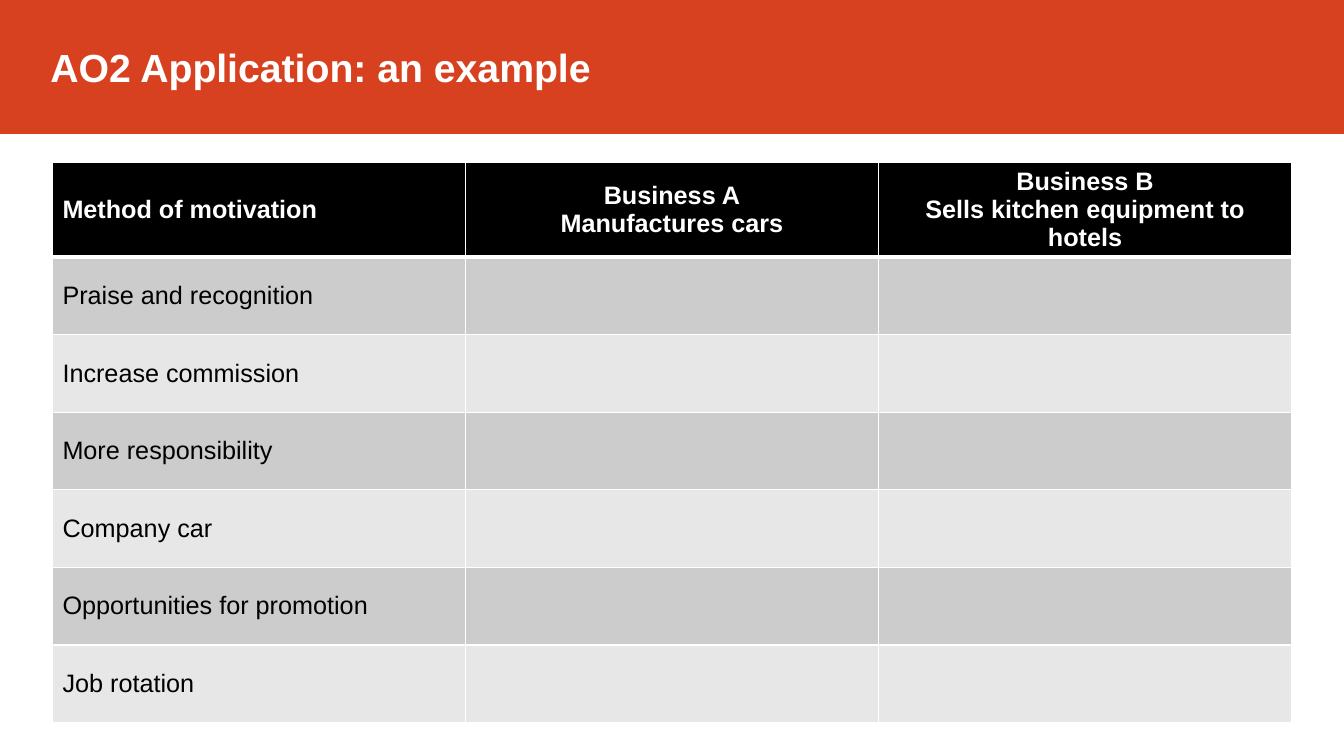
"""Build a slide with a title band and a table of motivation methods."""
from lxml import etree
from pptx import Presentation
from pptx.dml.color import RGBColor
from pptx.enum.shapes import MSO_SHAPE
from pptx.enum.text import MSO_ANCHOR, PP_ALIGN
from pptx.oxml.ns import qn
from pptx.util import Inches, Pt

RECT = MSO_SHAPE.RECTANGLE
MIDDLE = MSO_ANCHOR.MIDDLE
LEFT, CENTER = PP_ALIGN.LEFT, PP_ALIGN.CENTER

COLORS = {
    "band": "D74120",
    "head": "000000",
    "odd": "CCCCCC",
    "even": "E7E7E7",
    "light": "FFFFFF",
    "dark": "000000",
}
FORMATS = {
    "title": {"name": "Arial", "size": Pt(28), "bold": True},
    "head": {"name": "Arial", "size": Pt(18), "bold": True},
    "body": {"name": "Arial", "size": Pt(18), "bold": False},
}
HEADS = [
    ["Method of motivation"],
    ["Business A", "Manufactures cars"],
    ["Business B", "Sells kitchen equipment to hotels"],
]
METHODS = [
    "Praise and recognition",
    "Increase commission",
    "More responsibility",
    "Company car",
    "Opportunities for promotion",
    "Job rotation",
]


def color(key):
    """Return the named color."""
    return RGBColor.from_string(COLORS[key])


def paint(item, key):
    """Give an item a solid fill."""
    item.fill.solid()
    item.fill.fore_color.rgb = color(key)


def write(frame, lines, style, ink, align=LEFT):
    """Write one paragraph per line in the given style."""
    for i, line in enumerate(lines):
        para = frame.add_paragraph() if i else frame.paragraphs[0]
        para.alignment = align
        run = para.add_run()
        run.text = line
        for name, value in FORMATS[style].items():
            setattr(run.font, name, value)
        run.font.color.rgb = color(ink)


def add_band(slide, text):
    """Add the title band across the top."""
    band = slide.shapes.add_shape(RECT, 0, 0, Inches(13.33), Inches(1.32))
    band.shadow.inherit = False
    paint(band, "band")
    band.line.color.rgb = color("band")
    band.line.width = Pt(1)
    frame = band.text_frame
    frame.word_wrap = True
    frame.vertical_anchor = MIDDLE
    frame.margin_left = Inches(0.5)
    write(frame, [text], "title", "light")


def add_edges(cell, top, bottom):
    """Draw light borders round a cell, with widths in points."""
    props = cell._tc.get_or_add_tcPr()
    for side, width in zip("LRTB", (1, 1, top, bottom)):
        line = etree.SubElement(props, qn(f"a:ln{side}"), w=str(Pt(width)))
        fill = etree.SubElement(line, qn("a:solidFill"))
        etree.SubElement(fill, qn("a:srgbClr"), val=COLORS["light"])


def add_grid(slide):
    """Add the table with a header row and banded method rows."""
    rows, cols = len(METHODS) + 1, len(HEADS)
    frame = slide.shapes.add_table(
        rows, cols, Inches(0.52), Inches(1.61), Inches(12.29), Inches(5.55))
    table = frame.table
    for col in table.columns:
        col.width = Inches(12.29 / cols)
    for r, row in enumerate(table.rows):
        row.height = Inches(0.77 if r else 0.93)
        shade = ("even", "odd")[r % 2] if r else "head"
        for c, cell in enumerate(row.cells):
            add_edges(cell, 3 if r == 1 else 1, 1 if r else 3)
            paint(cell, shade)
            cell.vertical_anchor = MIDDLE
            if r == 0:
                write(cell.text_frame, HEADS[c], "head", "light",
                      CENTER if c else LEFT)
            elif c == 0:
                write(cell.text_frame, [METHODS[r - 1]], "body", "dark")


def main():
    """Build and save the slide."""
    deck = Presentation()
    deck.slide_width, deck.slide_height = Inches(13.33), Inches(7.5)
    slide = deck.slides.add_slide(deck.slide_layouts[6])
    add_band(slide, "AO2 Application: an example")
    add_grid(slide)
    deck.save("out.pptx")


if __name__ == "__main__":
    main()
